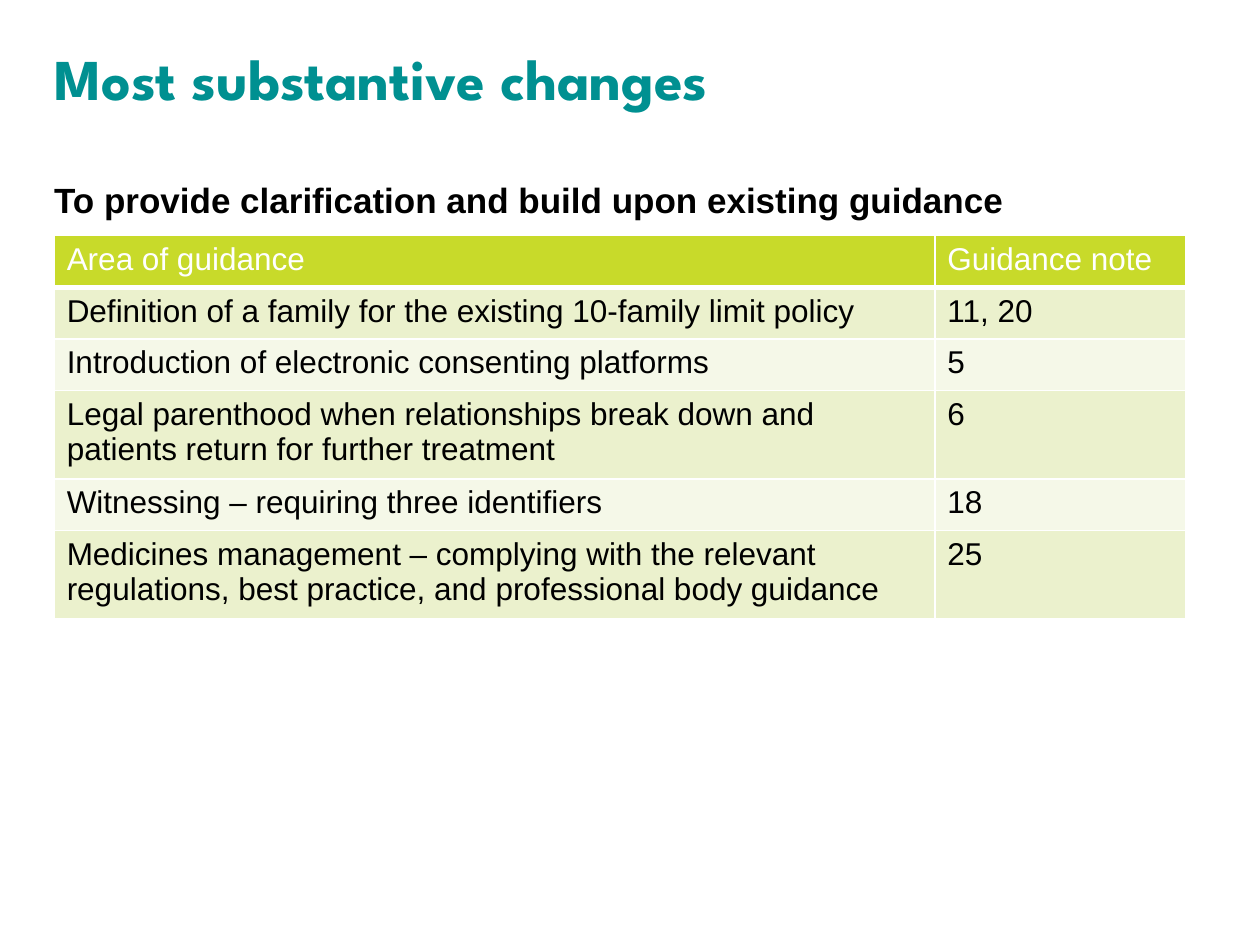
from lxml import etree
from pptx import Presentation
from pptx.dml.color import RGBColor
from pptx.enum import text
from pptx.oxml.ns import qn
from pptx.util import Inches, Pt

# Content
TITLE = "Most substantive changes"
SUBTITLE = "To provide clarification and build upon existing guidance"
ROWS = [
    ("Area of guidance", "Guidance note"),
    ("Definition of a family for the existing 10-family limit policy", "11, 20"),
    ("Introduction of electronic consenting platforms", "5"),
    ("Legal parenthood when relationships break down and patients return "
     "for further treatment", "6"),
    ("Witnessing – requiring three identifiers", "18"),
    ("Medicines management – complying with the relevant regulations, "
     "best practice, and professional body guidance", "25"),
]

# Layout and colours
LEFT = 0.43
COLUMN_WIDTHS = (6.99, 1.99)
ONE_LINE, TWO_LINES = 0.41, 0.66
LINE_LENGTH = 65
TEAL, LIME, BLACK, WHITE = "009091", "C8DA2A", "000000", "FFFFFF"
BANDS = ("F5F8E8", "EBF1CD")


def color(value):
    return RGBColor.from_string(value)


def write(frame, content, size, fill, font="Arial", bold=False, spacing=None):
    paragraph = frame.paragraphs[0]
    paragraph.alignment = text.PP_ALIGN.LEFT
    if spacing:
        paragraph.line_spacing = Pt(spacing)
    run = paragraph.add_run()
    run.text = content
    run.font.name = font
    run.font.size = Pt(size)
    run.font.bold = bold
    run.font.color.rgb = color(fill)


def add_heading(slide, content, top, height, **style):
    box = slide.shapes.add_textbox(Inches(LEFT), Inches(top), Inches(9.13), Inches(height))
    frame = box.text_frame
    frame.word_wrap = True
    frame.margin_left = frame.margin_right = frame.margin_top = frame.margin_bottom = 0
    write(frame, content, bold=True, **style)


def add_borders(cell, bottom):
    properties = cell._tc.get_or_add_tcPr()
    widths = {"a:lnL": 1, "a:lnR": 1, "a:lnT": 1, "a:lnB": bottom}
    for position, (tag, width) in enumerate(widths.items()):
        line = etree.Element(qn(tag), w=str(Pt(width)))
        fill = etree.SubElement(line, qn("a:solidFill"))
        etree.SubElement(fill, qn("a:srgbClr"), val=WHITE)
        properties.insert(position, line)


def add_guidance_table(slide):
    heights = [TWO_LINES if len(row[0]) > LINE_LENGTH else ONE_LINE for row in ROWS]
    table = slide.shapes.add_table(
        len(ROWS), len(COLUMN_WIDTHS), Inches(LEFT), Inches(1.87),
        Inches(sum(COLUMN_WIDTHS)), Inches(sum(heights))).table
    for column, width in zip(table.columns, COLUMN_WIDTHS):
        column.width = Inches(width)
    for index, (row, height) in enumerate(zip(ROWS, heights)):
        table.rows[index].height = Inches(height)
        header = index == 0
        for column, content in enumerate(row):
            cell = table.cell(index, column)
            cell.fill.solid()
            cell.fill.fore_color.rgb = color(LIME if header else BANDS[index % 2])
            write(cell.text_frame, content, 18, WHITE if header else BLACK)
            add_borders(cell, bottom=3 if header else 1)


def main():
    presentation = Presentation()
    presentation.slide_width, presentation.slide_height = Inches(10), Inches(7.5)
    slide = presentation.slides.add_slide(presentation.slide_layouts[6])
    add_heading(slide, TITLE, 0.43, 0.48, size=33, fill=TEAL,
                font="League Spartan", spacing=33)
    add_guidance_table(slide)
    add_heading(slide, SUBTITLE, 1.46, 0.66, size=20, fill=BLACK, spacing=21)
    presentation.save("out.pptx")


if __name__ == "__main__":
    main()
